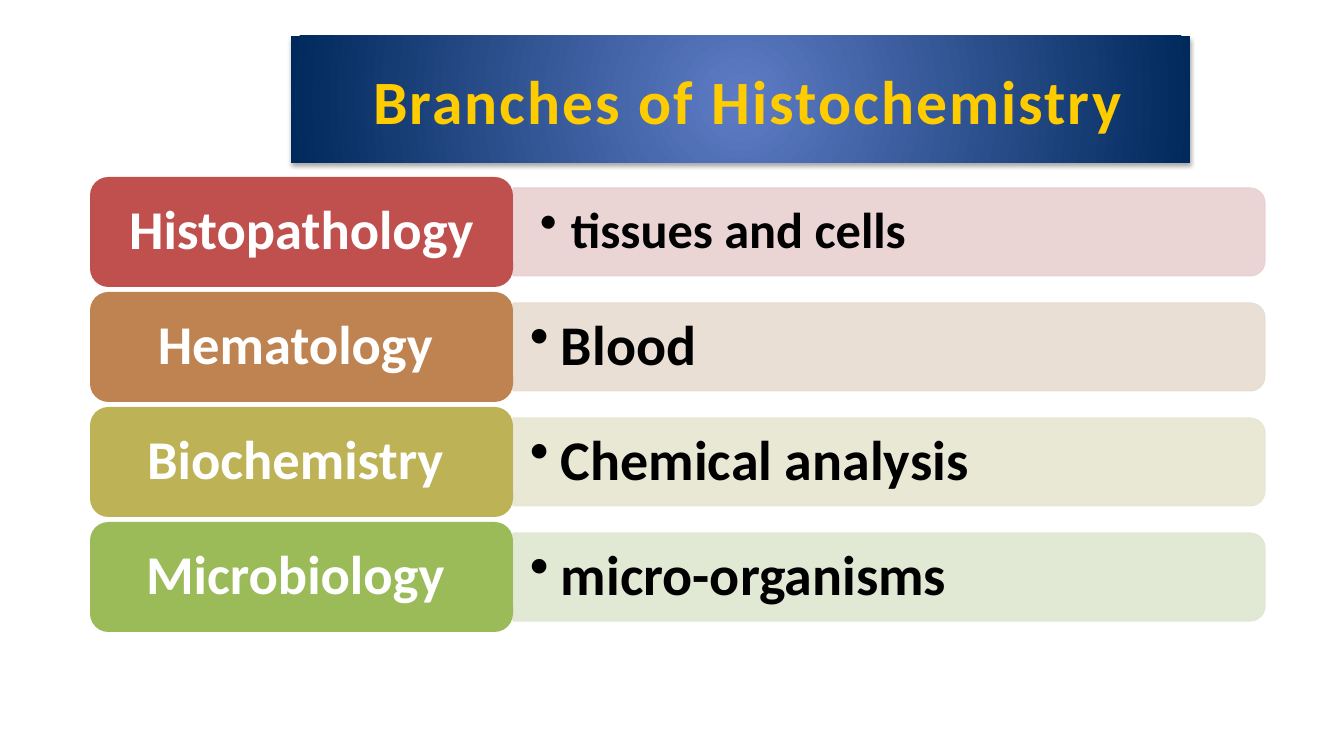
"""Build the Branches of Histochemistry slide."""
from pptx import Presentation, util as u
from pptx.dml.color import RGBColor
from pptx.enum import shapes, text
from pptx.oxml import parse_xml
from pptx.oxml.ns import nsdecls, qn
from lxml import etree

HEADING = "Branches of Histochemistry "
BRANCHES = [
    ("Histopathology", "C0504D", "tissues and cells", "E8D0D0", 36, (27, 14)),
    ("Hematology ", "BE8351", "Blood", "E8DCD0", 40, (17, 8)),
    ("Biochemistry ", "BDB255", "Chemical analysis", "E7E6D1", 40, (17, 8)),
    ("Microbiology ", "9BBB59", "micro-organisms", "DEE7D1", 40, (17, 8)),
]
COLORS = {"heading": "FFCC00", "glow": "5E7CC5", "navy": "00295C",
          "label": "FFFFFF", "detail": "000000", "shadow": "000000"}
FONT = "Calibri"
SLIDE_W, SLIDE_H = 1344, 756
HEADING_BOX = (291, 36, 899, 127)
LEFT, TOP, PITCH = 90, 177, 115
LABEL_W, LABEL_H, LABEL_INSET = 423, 110, (21, 14)
BAR_W, BAR_H = 752, 88
DETAIL_W, DETAIL_H, INDENT = 748, 80, 31


def px(length):
    return u.Emu(round(length * 914400 / 100.8))


def rgb(color):
    return RGBColor.from_string(color)


def add_panel(slide, preset, box, color):
    panel = slide.shapes.add_shape(preset, *map(px, box))
    panel.shadow.inherit = False
    panel.fill.solid()
    panel.fill.fore_color.rgb = rgb(color)
    panel.line.fill.background()
    return panel


def write(shape, words, size, color, inset=(10, 5), align=text.PP_ALIGN.CENTER):
    frame = shape.text_frame
    frame.word_wrap = True
    frame.vertical_anchor = text.MSO_ANCHOR.MIDDLE
    frame.margin_left = frame.margin_right = px(inset[0])
    frame.margin_top = frame.margin_bottom = px(inset[1])
    paragraph = frame.paragraphs[0]
    paragraph.alignment = align
    run = paragraph.add_run()
    run.text = words
    run.font.name, run.font.size, run.font.bold = FONT, u.Pt(size), True
    run.font.color.rgb = rgb(color)
    return paragraph


def set_spacing(paragraph, after, bullet=None):
    props = paragraph._p.get_or_add_pPr()
    space = etree.SubElement(props, qn("a:spcAft"))
    etree.SubElement(space, qn("a:spcPct"), val=str(after * 1000))
    if bullet:
        props.set("marL", str(px(INDENT)))
        props.set("indent", str(-px(INDENT)))
        etree.SubElement(props, qn("a:buChar"), char=bullet)
    paragraph.line_spacing = 0.9


def add_heading(slide):
    heading = add_panel(slide, shapes.MSO_SHAPE.RECTANGLE, HEADING_BOX, COLORS["navy"])
    props = heading._element.spPr
    gradient = parse_xml(
        f'<a:gradFill {nsdecls("a")} rotWithShape="1"><a:gsLst>'
        f'<a:gs pos="0"><a:srgbClr val="{COLORS["glow"]}"/></a:gs>'
        f'<a:gs pos="100000"><a:srgbClr val="{COLORS["navy"]}"/></a:gs></a:gsLst>'
        '<a:path path="circle"><a:fillToRect l="50000" t="50000" r="50000" b="50000"/>'
        '</a:path></a:gradFill>')
    props.replace(props.find(qn("a:solidFill")), gradient)
    props.find(qn("a:effectLst")).append(parse_xml(
        f'<a:outerShdw {nsdecls("a")} blurRad="{u.Pt(3.1)}" dist="{u.Pt(1.8)}" '
        f'dir="5400000" rotWithShape="0"><a:srgbClr val="{COLORS["shadow"]}">'
        '<a:alpha val="35000"/></a:srgbClr></a:outerShdw>'))
    paragraph = write(heading, HEADING, 44, COLORS["heading"])
    paragraph._p.get_or_add_pPr().set("rtl", "1")
    paragraph.runs[0].font._element.set("spc", "150")


def add_branch(slide, row, branch):
    label, label_color, detail, bar_color, detail_size, detail_inset = branch
    top = TOP + row * PITCH
    middle = top + LABEL_H / 2
    bar_left = LEFT + LABEL_W

    bar_box = (bar_left + (BAR_W - BAR_H) / 2, middle - BAR_W / 2, BAR_H, BAR_W)
    bar = add_panel(slide, shapes.MSO_SHAPE.ROUND_2_SAME_RECTANGLE, bar_box, bar_color)
    bar.rotation = 90
    bar.line.color.rgb = rgb(bar_color)
    bar.line.width = u.Pt(0.75)
    for tint in bar._element.spPr.iter(qn("a:srgbClr")):
        etree.SubElement(tint, qn("a:alpha"), val="90000")

    detail_box = (bar_left, middle - DETAIL_H / 2, DETAIL_W, DETAIL_H)
    note = slide.shapes.add_textbox(*map(px, detail_box))
    paragraph = write(note, detail, detail_size, COLORS["detail"], detail_inset,
                      text.PP_ALIGN.LEFT)
    paragraph.level = 1
    set_spacing(paragraph, 15, "•")

    name = add_panel(slide, shapes.MSO_SHAPE.ROUNDED_RECTANGLE,
                     (LEFT, top, LABEL_W, LABEL_H), label_color)
    set_spacing(write(name, label, 39, COLORS["label"], LABEL_INSET), 35)


def main():
    deck = Presentation()
    deck.slide_width, deck.slide_height = px(SLIDE_W), px(SLIDE_H)
    slide = deck.slides.add_slide(deck.slide_layouts[6])
    add_heading(slide)
    for row, branch in enumerate(BRANCHES):
        add_branch(slide, row, branch)
    deck.save("out.pptx")


if __name__ == "__main__":
    main()
